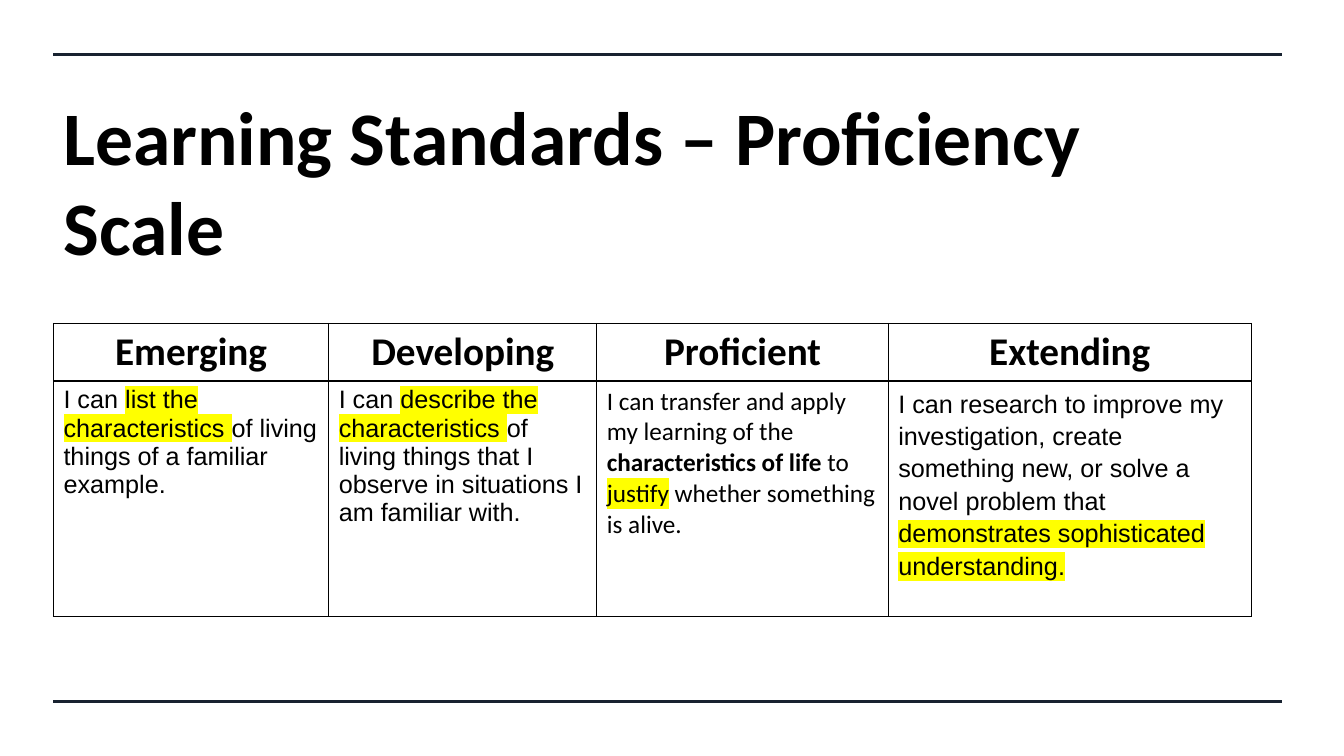
from dataclasses import dataclass

from lxml.etree import SubElement
from pptx import Presentation
from pptx.dml.color import RGBColor
from pptx.enum.shapes import MSO_CONNECTOR as Connector
from pptx.enum.text import MSO_ANCHOR as Anchor, PP_ALIGN as Align
from pptx.oxml import parse_xml
from pptx.oxml.ns import nsdecls, qn
from pptx.util import Inches, Pt


@dataclass(frozen=True)
class Theme:
    """Colours, fonts and sizes of the slide."""
    ink: str = "000000"
    rule: str = "182230"
    marker: str = "FFFF00"
    heading_font: str = "Calibri"
    body_font: str = "Arial"
    title_size: int = 54
    header_size: int = 28
    body_size: int = 18
    rule_width: float = 2.25
    border_width: float = 1


@dataclass(frozen=True)
class Level:
    """One column of the proficiency scale, with runs as (text, emphasis)."""
    name: str
    width: float
    runs: tuple
    font: str
    line_spacing: float = 1.0


THEME = Theme()
LEVELS = (
    Level("Emerging", 2.73, (
        ("I can ", ""),
        ("list the characteristics ", "marked"),
        ("of living things of a familiar example.", ""),
    ), THEME.body_font),
    Level("Developing", 2.66, (
        ("I can ", ""),
        ("describe the characteristics ", "marked"),
        ("of living things that I observe in situations I am familiar with.", ""),
    ), THEME.body_font),
    Level("Proficient", 2.89, (
        ("I can transfer and apply my learning of the ", ""),
        ("characteristics of life", "bold"),
        (" to ", ""),
        ("justify", "marked"),
        (" whether something is alive.", ""),
    ), THEME.heading_font),
    Level("Extending", 3.6, (
        ("I can research to improve my investigation, create something new, "
         "or solve a novel problem that ", ""),
        ("demonstrates sophisticated understanding.", "marked"),
    ), THEME.body_font, 1.15),
)


def style_run(run, font, size, bold=False, marked=False):
    """Format a run and highlight it if marked."""
    run.font.name = font
    run.font.size = Pt(size)
    run.font.bold = bold
    run.font.color.rgb = RGBColor.from_string(THEME.ink)
    if marked:
        highlight = parse_xml(
            f'<a:highlight {nsdecls("a")}><a:srgbClr val="{THEME.marker}"/></a:highlight>')
        run.font._element.find(qn("a:solidFill")).addnext(highlight)


def add_rule(slide, left, top, width):
    """Draw a horizontal rule."""
    line = slide.shapes.add_connector(
        Connector.STRAIGHT, Inches(left), Inches(top), Inches(left + width), Inches(top))
    line.line.color.rgb = RGBColor.from_string(THEME.rule)
    line.line.width = Pt(THEME.rule_width)
    SubElement(line._element.spPr, qn("a:effectLst"))


def add_title(slide, text, left, top, width, height):
    """Place the title in the upper part of its box."""
    frame = slide.shapes.add_textbox(
        Inches(left), Inches(top), Inches(width), Inches(height)).text_frame
    frame.word_wrap = True
    frame.vertical_anchor = Anchor.MIDDLE
    frame.margin_bottom = Inches(0.97)
    frame.text = text
    style_run(frame.paragraphs[0].runs[0], THEME.heading_font, THEME.title_size, bold=True)


def outline_cell(cell):
    """Give a cell thin borders and no fill."""
    properties = cell._tc.get_or_add_tcPr()
    for side in ("lnL", "lnR", "lnT", "lnB"):
        properties.append(parse_xml(
            f'<a:{side} {nsdecls("a")} w="{Pt(THEME.border_width)}"><a:solidFill>'
            f'<a:srgbClr val="{THEME.ink}"/></a:solidFill></a:{side}>'))
    cell.fill.background()


def add_scale(slide, levels, left, top, header_height, body_height):
    """Build the scale table with one column per level."""
    width = sum(level.width for level in levels)
    table = slide.shapes.add_table(
        2, len(levels), Inches(left), Inches(top),
        Inches(width), Inches(header_height + body_height)).table
    table.first_row = False
    table.horz_banding = False
    table.rows[0].height = Inches(header_height)
    table.rows[1].height = Inches(body_height)
    for index, level in enumerate(levels):
        table.columns[index].width = Inches(level.width)
        header, body = table.cell(0, index), table.cell(1, index)
        outline_cell(header)
        outline_cell(body)
        header.text_frame.text = level.name
        paragraph = header.text_frame.paragraphs[0]
        paragraph.alignment = Align.CENTER
        style_run(paragraph.runs[0], THEME.heading_font, THEME.header_size, bold=True)
        paragraph = body.text_frame.paragraphs[0]
        paragraph.line_spacing = level.line_spacing
        for text, emphasis in level.runs:
            run = paragraph.add_run()
            run.text = text
            style_run(run, level.font, THEME.body_size,
                      bold=emphasis == "bold", marked=emphasis == "marked")


def main():
    """Build and save the proficiency scale slide."""
    presentation = Presentation()
    presentation.slide_width = Inches(13.33)
    presentation.slide_height = Inches(7.5)
    slide = presentation.slides.add_slide(presentation.slide_layouts[6])
    left = 0.53
    for top in (0.54, 6.96):
        add_rule(slide, left, top, 12.19)
    add_title(slide, "Learning Standards – Proficiency Scale", left, 1.07, 11.63, 2.36)
    add_scale(slide, LEVELS, left, 3.21, 0.57, 2.34)
    presentation.save("out.pptx")


if __name__ == "__main__":
    main()
